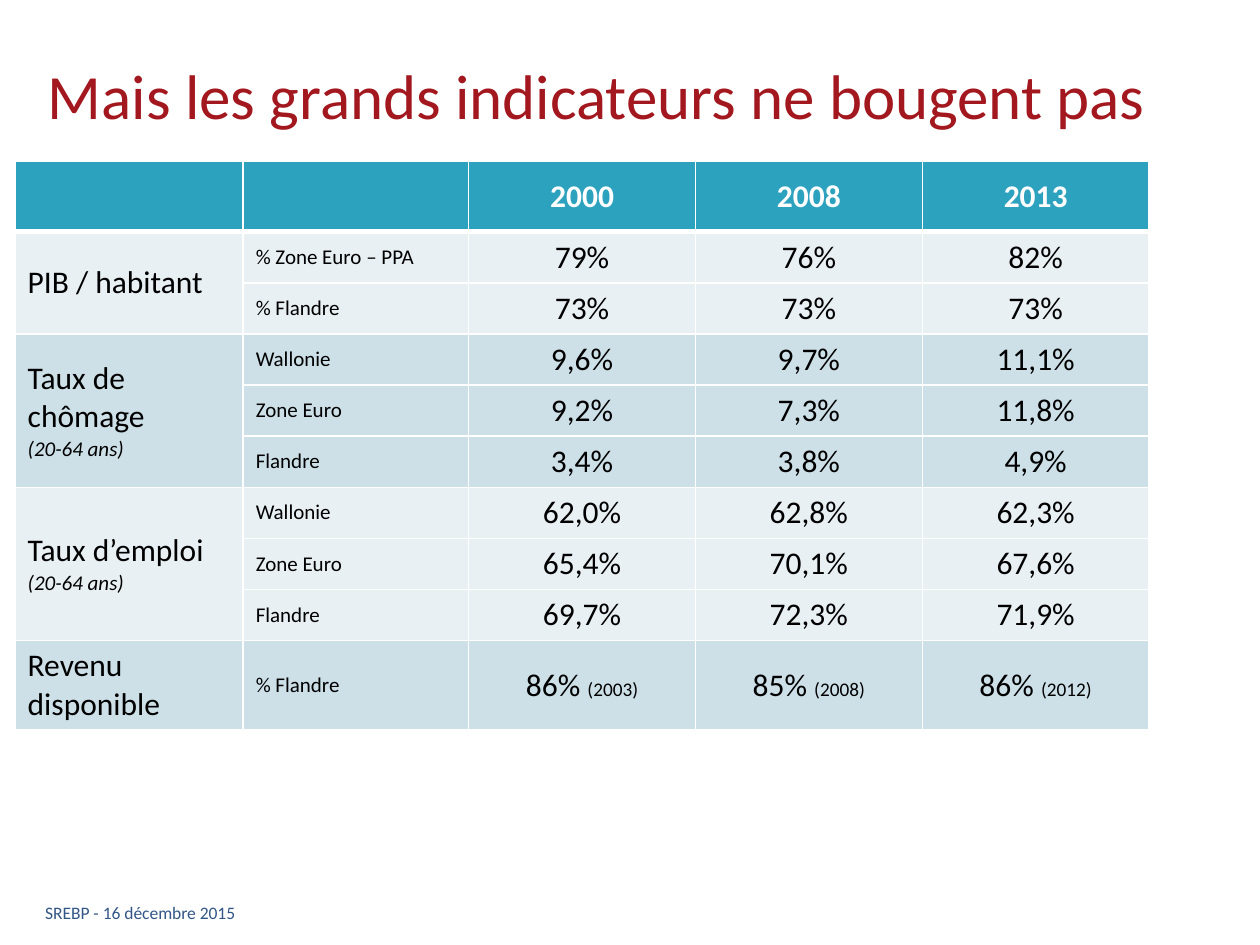
from dataclasses import dataclass

from lxml.etree import SubElement as Sub
from pptx import Presentation
from pptx.dml.color import RGBColor as Rgb
from pptx.enum.text import MSO_ANCHOR as Anchor, PP_ALIGN as Align
from pptx.oxml.ns import qn
from pptx.util import Inches, Pt


@dataclass(frozen=True)
class Theme:
    font: str = "Calibri"
    title: str = "A3171E"
    foot: str = "315687"
    head: str = "2DA2BF"
    bands: tuple = ("E8F0F4", "CDE0E8")
    white: str = "FFFFFF"
    black: str = "000000"
    big: int = 36
    body: int = 18
    small: int = 12
    note: int = 11
    tiny: int = 10
    thin: int = 1
    thick: int = 3


YEARS = ["2000", "2008", "2013"]
GROUPS = [
    ("PIB / habitant", "", [
        ("% Zone Euro – PPA", ["79%", "76%", "82%"]),
        ("% Flandre", ["73%", "73%", "73%"]),
    ]),
    ("Taux de chômage", "(20-64 ans)", [
        ("Wallonie", ["9,6%", "9,7%", "11,1%"]),
        ("Zone Euro", ["9,2%", "7,3%", "11,8%"]),
        ("Flandre", ["3,4%", "3,8%", "4,9%"]),
    ]),
    ("Taux d’emploi", "(20-64 ans)", [
        ("Wallonie", ["62,0%", "62,8%", "62,3%"]),
        ("Zone Euro", ["65,4%", "70,1%", "67,6%"]),
        ("Flandre", ["69,7%", "72,3%", "71,9%"]),
    ]),
    ("Revenu disponible", "", [
        ("% Flandre", ["86% (2003)", "85% (2008)", "86% (2012)"]),
    ]),
]
WIDTHS = [1.81, 1.79, 1.8, 1.8, 1.8]
HEIGHTS = [0.56] + [0.4] * 8 + [0.7]


class Deck:
    """Hold the theme and the current slide, and draw each kind of element."""

    def __init__(self, theme):
        self.theme = theme
        self.prs = Presentation()
        self.prs.slide_width, self.prs.slide_height = Inches(10), Inches(7.5)
        self.slide = self.prs.slides.add_slide(self.prs.slide_layouts[5])

    def style(self, run, size, color, bold=False, italic=False):
        font = run.font
        font.name, font.size = self.theme.font, Pt(size)
        font.bold, font.italic = bold, italic
        font.color.rgb = Rgb.from_string(color)

    def label(self, shape, box, text, size, color):
        shape.left, shape.top, shape.width, shape.height = map(Inches, box)
        frame = shape.text_frame
        frame.text = text
        frame.word_wrap = True
        frame.vertical_anchor = Anchor.MIDDLE
        para = frame.paragraphs[0]
        para.alignment = Align.LEFT
        self.style(para.runs[0], size, color)

    def title(self, box, text):
        self.label(self.slide.shapes.title, box, text, self.theme.big, self.theme.title)

    def footer(self, box, text):
        shape = self.slide.shapes.add_textbox(*map(Inches, box))
        self.label(shape, box, text, self.theme.tiny, self.theme.foot)

    def paint(self, cell, fill, top, base):
        props = cell._tc.get_or_add_tcPr()
        thin = self.theme.thin
        for tag, width in zip(("lnL", "lnR", "lnT", "lnB"), (thin, thin, top, base)):
            line = Sub(props, qn(f"a:{tag}"), w=str(Pt(width)))
            Sub(Sub(line, qn("a:solidFill")), qn("a:srgbClr"), val=self.theme.white)
        cell.fill.solid()
        cell.fill.fore_color.rgb = Rgb.from_string(fill)
        cell.vertical_anchor = Anchor.MIDDLE

    def entry(self, cell, text, size, color=None, bold=False):
        cell.text_frame.text = text
        run = cell.text_frame.paragraphs[0].runs[0]
        self.style(run, size, color or self.theme.black, bold)

    def group(self, cell, name, note):
        self.entry(cell, name, self.theme.body)
        if note:
            para = cell.text_frame.add_paragraph()
            para.text = note
            self.style(para.runs[0], self.theme.small, self.theme.black, italic=True)

    def value(self, cell, text):
        main, gap, note = text.partition(" ")
        self.entry(cell, main + gap, self.theme.body)
        para = cell.text_frame.paragraphs[0]
        para.alignment = Align.CENTER
        if note:
            run = para.add_run()
            run.text = note
            self.style(run, self.theme.note, self.theme.black)

    def table(self, left, top):
        look = self.theme
        size = map(Inches, (left, top, sum(WIDTHS), sum(HEIGHTS)))
        grid = self.slide.shapes.add_table(len(HEIGHTS), len(WIDTHS), *size).table
        grid.horz_banding = False
        for col, width in zip(grid.columns, WIDTHS):
            col.width = Inches(width)
        for row, height in zip(grid.rows, HEIGHTS):
            row.height = Inches(height)
        for cell in grid.rows[0].cells:
            self.paint(cell, look.head, look.thin, look.thick)
        for col, year in enumerate(YEARS, 2):
            cell = grid.cell(0, col)
            self.entry(cell, year, look.body, look.white, True)
            cell.text_frame.paragraphs[0].alignment = Align.CENTER
        row = 1
        for count, (name, note, lines) in enumerate(GROUPS):
            first = grid.cell(row, 0)
            self.group(first, name, note)
            if len(lines) > 1:
                first.merge(grid.cell(row + len(lines) - 1, 0))
            for area, values in lines:
                edge = look.thick if row == 1 else look.thin
                for cell in grid.rows[row].cells:
                    self.paint(cell, look.bands[count % 2], edge, look.thin)
                self.entry(grid.cell(row, 1), area, look.small)
                for col, text in enumerate(values, 2):
                    self.value(grid.cell(row, col), text)
                row += 1


def main():
    deck = Deck(Theme())
    deck.title((0.28, 0.21, 9.45, 1.08), "Mais les grands indicateurs ne bougent pas")
    deck.table(0.12, 1.28)
    deck.footer((0.26, 7.06, 4.5, 0.36), "SREBP - 16 décembre 2015")
    deck.prs.save("out.pptx")


if __name__ == "__main__":
    main()
